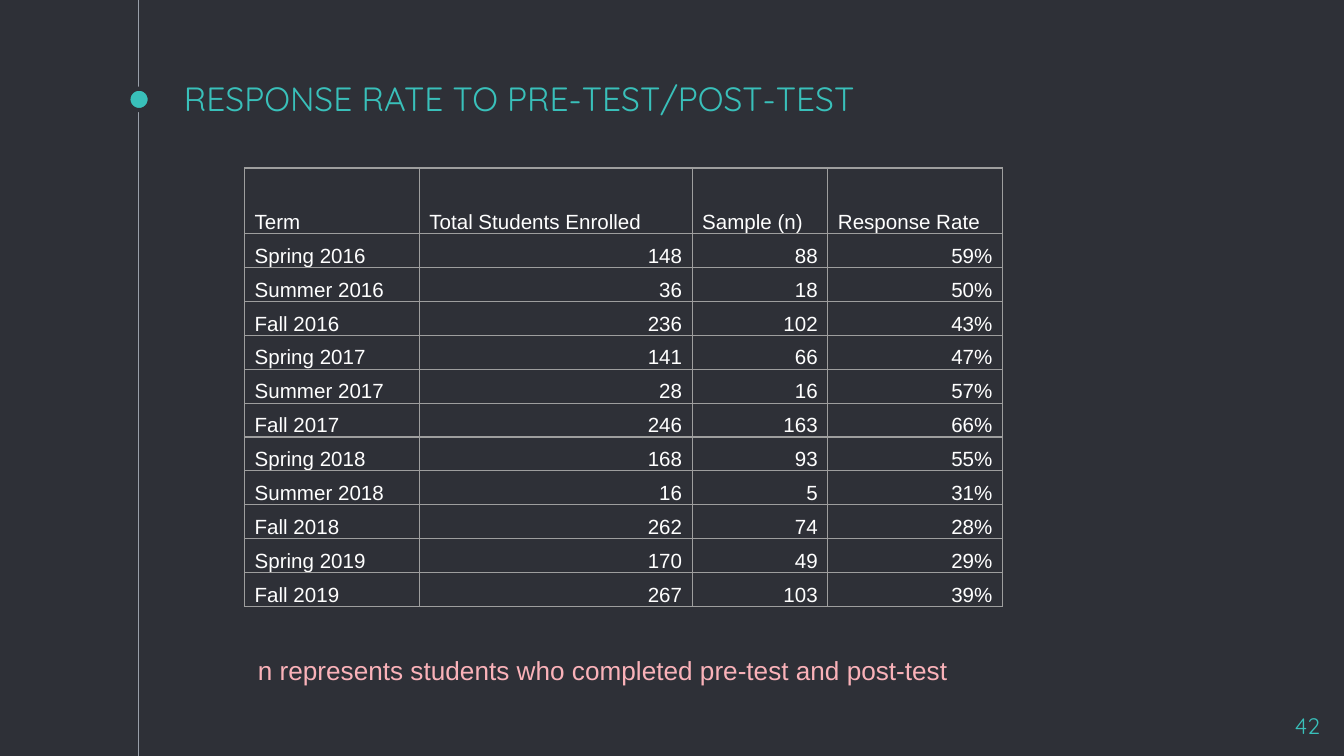
from dataclasses import dataclass

from lxml import etree
from pptx import Presentation
from pptx import util as u
from pptx.dml.color import RGBColor
from pptx.enum import shapes, text
from pptx.oxml.ns import qn

COLORS = {
    "bg": "2E3037",
    "teal": "39C0BA",
    "rail": "999FA9",
    "border": "9E9E9E",
    "white": "FFFFFF",
    "pink": "FAB2B9",
}
COLS, ROWS = 100, 56.25  # square grid over the slide
CELL = u.Inches(10) / COLS
RIGHT = text.PP_ALIGN.RIGHT
BOTTOM = text.MSO_ANCHOR.BOTTOM

HEADER = ("Term", "Total Students Enrolled", "Sample (n)", "Response Rate")
COL_WIDTHS = (13, 20.3, 10.1, 13)
HEADER_HEIGHT, ROW_HEIGHT = 4.9, 2.52


@dataclass(frozen=True)
class Box:
    """Position and size in grid units."""
    col: float
    row: float
    width: float
    height: float

    def emu(self) -> tuple:
        return tuple(grid(n) for n in (self.col, self.row, self.width, self.height))


@dataclass(frozen=True)
class TermResult:
    term: str
    enrolled: int
    sample: int
    rate: int

    def cells(self) -> tuple:
        return self.term, str(self.enrolled), str(self.sample), f"{self.rate}%"


RESULTS = (
    TermResult("Spring 2016", 148, 88, 59),
    TermResult("Summer 2016", 36, 18, 50),
    TermResult("Fall 2016", 236, 102, 43),
    TermResult("Spring 2017", 141, 66, 47),
    TermResult("Summer 2017", 28, 16, 57),
    TermResult("Fall 2017", 246, 163, 66),
    TermResult("Spring 2018", 168, 93, 55),
    TermResult("Summer 2018", 16, 5, 31),
    TermResult("Fall 2018", 262, 74, 28),
    TermResult("Spring 2019", 170, 49, 29),
    TermResult("Fall 2019", 267, 103, 39),
)


def grid(n: float) -> int:
    return u.Emu(round(n * CELL))


def rgb(name: str) -> RGBColor:
    return RGBColor.from_string(COLORS[name])


def write(tf, words: str, *, size: float, color: str, font: str = "Arial",
          align=None, spacing=None) -> None:
    p = tf.paragraphs[0]
    p.alignment = align
    p.line_spacing = spacing
    r = p.add_run()
    r.text = words
    r.font.size = u.Pt(size)
    r.font.name = font
    r.font.color.rgb = rgb(color)


def add_text(slide, box: Box, words: str, *, inset: float = 1,
             anchor=text.MSO_ANCHOR.TOP, **fmt) -> None:
    tf = slide.shapes.add_textbox(*box.emu()).text_frame
    tf.word_wrap = True
    tf.vertical_anchor = anchor
    tf.margin_left = tf.margin_right = grid(1)
    tf.margin_top = tf.margin_bottom = grid(inset)
    write(tf, words, **fmt)


def add_rail(slide, col: float, dot: Box) -> None:
    line = slide.shapes.add_connector(
        shapes.MSO_CONNECTOR.STRAIGHT, grid(col), 0, grid(col), grid(ROWS))
    line.line.color.rgb = rgb("rail")
    line.line.width = u.Pt(0.75)
    etree.SubElement(line._element.spPr, qn("a:effectLst"))

    sp = slide.shapes.add_shape(shapes.MSO_SHAPE.OVAL, *dot.emu())
    sp.shadow.inherit = False
    sp.fill.solid()
    sp.fill.fore_color.rgb = rgb("teal")
    sp.line.color.rgb = rgb("bg")
    sp.line.width = u.Pt(2.25)


def set_borders(cell) -> None:
    tc_pr = cell._tc.get_or_add_tcPr()
    for i, side in enumerate(("lnL", "lnR", "lnT", "lnB")):
        ln = etree.Element(qn(f"a:{side}"), w=str(u.Pt(0.75)))
        fill = etree.SubElement(ln, qn("a:solidFill"))
        etree.SubElement(fill, qn("a:srgbClr"), val=COLORS["border"])
        tc_pr.insert(i, ln)


def add_results(slide, col: float, row: float) -> None:
    rows = [HEADER] + [result.cells() for result in RESULTS]
    box = Box(col, row, sum(COL_WIDTHS), HEADER_HEIGHT + ROW_HEIGHT * len(RESULTS))
    table = slide.shapes.add_table(len(rows), len(HEADER), *box.emu()).table
    table.first_row = table.horz_banding = False
    for column, width in zip(table.columns, COL_WIDTHS):
        column.width = grid(width)
    for i, values in enumerate(rows):
        table.rows[i].height = grid(ROW_HEIGHT if i else HEADER_HEIGHT)
        for j, value in enumerate(values):
            cell = table.cell(i, j)
            cell.fill.background()
            cell.vertical_anchor = BOTTOM
            cell.margin_left = cell.margin_right = grid(0.75)
            cell.margin_top = cell.margin_bottom = 0
            write(cell.text_frame, value, size=11, color="white", spacing=1.07,
                  align=RIGHT if i and j else None)
            set_borders(cell)


def main() -> None:
    prs = Presentation()
    prs.slide_width, prs.slide_height = grid(COLS), grid(ROWS)
    slide = prs.slides.add_slide(prs.slide_layouts[6])
    slide.background.fill.solid()
    slide.background.fill.fore_color.rgb = rgb("bg")

    # Timeline rail with its dot
    add_rail(slide, 10.3, Box(9.55, 6.6, 1.6, 1.6))

    # Title and page number
    add_text(slide, Box(12.7, 6, 75, 3.8), "RESPONSE RATE TO PRE-TEST/POST-TEST",
             anchor=BOTTOM, size=18, color="teal", font="Quicksand")
    add_text(slide, Box(93.2, 52, 6, 3.4), "42",
             size=12, color="teal", font="Quicksand", align=RIGHT)

    # Response table and its note
    add_results(slide, 18.2, 12.5)
    add_text(slide, Box(18.2, 48.2, 59.8, 3.4),
             "n represents students who completed pre-test and post-test",
             inset=0.5, size=14, color="pink")

    prs.save("out.pptx")


if __name__ == "__main__":
    main()
